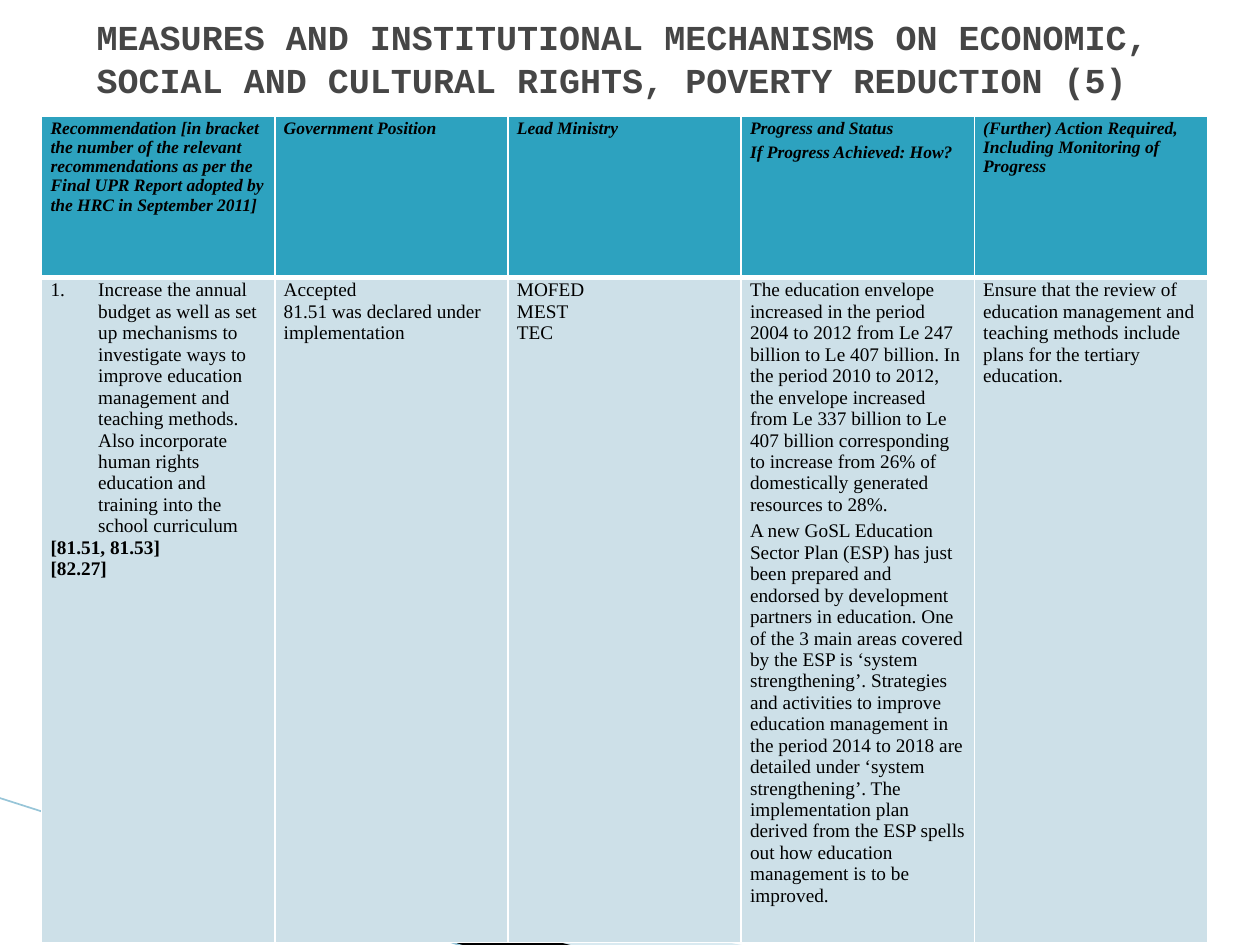
from lxml.etree import SubElement
from pptx import Presentation
from pptx.dml.color import RGBColor
from pptx.enum.shapes import MSO_CONNECTOR
from pptx.enum.text import MSO_ANCHOR
from pptx.oxml.ns import qn
from pptx.util import Cm, Pt


def color(hex_string):
    return RGBColor.from_string(hex_string)


def style_font(font, hex_string, values):
    font.color.rgb = color(hex_string)
    for key, value in values.items():
        setattr(font, key, value)


deck = Presentation()
deck.slide_width = Cm(25.4)
deck.slide_height = Cm(19.05)
slide = deck.slides.add_slide(deck.slide_layouts[6])
shapes = slide.shapes

wedges = [
    ("A0CBDC", 40, [(1.4, 16.54), (15.11, 19.08), (11.58, 19.08), (1.4, 16.51)]),
    ("000000", 100, [(1.35, 16.48), (11.61, 19.08), (9.45, 19.1), (1.37, 16.51)]),
]
for hex_string, opacity, points in wedges:
    corners = [(Cm(x), Cm(y)) for x, y in points]
    outline = shapes.build_freeform(*corners[0])
    outline.add_line_segments(corners[1:], close=True)
    wedge = outline.convert_to_shape()
    wedge.shadow.inherit = False
    wedge.line.fill.background()
    wedge.fill.solid()
    wedge.fill.fore_color.rgb = color(hex_string)
    if opacity < 100:
        tint = next(wedge.element.spPr.iter(qn("a:srgbClr")))
        SubElement(tint, qn("a:alpha"), val=str(opacity * 1000))

slope = shapes.add_connector(MSO_CONNECTOR.STRAIGHT, Cm(-0.03), Cm(16.08), Cm(9.42), Cm(19.1))
slope.line.color.rgb = color("97C5D8")
slope.line.width = Pt(0.95)
SubElement(slope.element.spPr, qn("a:effectLst"))

recommendations = [
    [
        ["Recommendation [in bracket the number of the relevant recommendations as per the "
         "Final UPR Report adopted by the HRC in September 2011]"],
        ["Government Position"],
        ["Lead Ministry"],
        ["Progress and Status", "If Progress Achieved: How?"],
        ["(Further) Action Required, Including Monitoring of Progress"],
    ],
    [
        ["Increase the annual budget as well as set up mechanisms to investigate ways to improve "
         "education management and teaching methods. Also incorporate human rights education and "
         "training into the school curriculum",
         "[81.51, 81.53]",
         "[82.27]"],
        ["Accepted", "81.51 was declared under implementation"],
        ["MOFED", "MEST", "TEC"],
        ["The education envelope increased in the period 2004 to 2012 from Le 247 billion to "
         "Le 407 billion. In the period 2010 to 2012, the envelope increased from Le 337 billion "
         "to Le 407 billion corresponding to increase from 26% of domestically generated "
         "resources to 28%.",
         "A new GoSL Education Sector Plan (ESP) has just been prepared and endorsed by "
         "development partners in education. One of the 3 main areas covered by the ESP is "
         "‘system strengthening’. Strategies and activities to improve education management in "
         "the period 2014 to 2018 are detailed under ‘system strengthening’. The implementation "
         "plan derived from the ESP spells out how education management is to be improved."],
        ["Ensure that the review of education management and teaching methods include plans for "
         "the tertiary education."],
    ],
]
row_formats = [
    {"height": Cm(3.25), "fill": "2DA2BF", "borders": {"L": 1, "R": 1, "T": 1, "B": 3},
     "font": {"name": "Times New Roman", "size": Pt(10), "bold": True, "italic": True}},
    {"height": Cm(13.41), "fill": "CDE0E8", "borders": {"L": 1, "R": 1, "T": 3, "B": 1},
     "font": {"name": "Times New Roman", "size": Pt(11), "bold": False, "italic": False}},
]
cell_format = {
    "margin_left": Cm(0.18),
    "margin_right": Cm(0.18),
    "margin_top": Cm(0.05),
    "margin_bottom": Cm(0.1),
    "vertical_anchor": MSO_ANCHOR.TOP,
}
table_height = sum(row_format["height"] for row_format in row_formats)
review = shapes.add_table(2, 5, Cm(0.84), Cm(2.34), Cm(23.5), table_height).table
review.horz_banding = False
for column in review.columns:
    column.width = Cm(4.7)

for row_index, (row_texts, row_format) in enumerate(zip(recommendations, row_formats)):
    review.rows[row_index].height = row_format["height"]
    for column_index, texts in enumerate(row_texts):
        cell = review.cell(row_index, column_index)
        for key, value in cell_format.items():
            setattr(cell, key, value)
        cell_properties = cell._tc.get_or_add_tcPr()
        for side, points in row_format["borders"].items():
            border = SubElement(cell_properties, qn(f"a:ln{side}"), w=str(Pt(points)))
            SubElement(SubElement(border, qn("a:solidFill")), qn("a:srgbClr"), val="FFFFFF")
        cell.fill.solid()
        cell.fill.fore_color.rgb = color(row_format["fill"])
        cell.text = "\n".join(texts)
        for number, paragraph in enumerate(cell.text_frame.paragraphs):
            if column_index >= 3:
                paragraph.space_after = Pt(3)
            numbered_cell = row_index == 1 and column_index == 0
            if numbered_cell:
                indents = paragraph._p.get_or_add_pPr()
                indents.set("marL", str(Cm(0.96)))
                indents.set("indent", str(Cm(-0.96)))
                if number == 0:
                    SubElement(indents, qn("a:buAutoNum"), type="arabicPeriod")
            font_values = dict(row_format["font"])
            if numbered_cell and number > 0:
                font_values["bold"] = True
            style_font(paragraph.runs[0].font, "000000", font_values)

title = shapes.add_textbox(Cm(1.7), Cm(0), Cm(22.86), Cm(2.34)).text_frame
title.word_wrap = True
title.vertical_anchor = MSO_ANCHOR.MIDDLE
title.text = ("MEASURES AND INSTITUTIONAL MECHANISMS ON ECONOMIC, "
              "SOCIAL AND CULTURAL RIGHTS, POVERTY REDUCTION (5)")
style_font(title.paragraphs[0].runs[0].font, "464646",
           {"name": "Courier New", "size": Pt(20), "bold": True})

deck.save("out.pptx")
